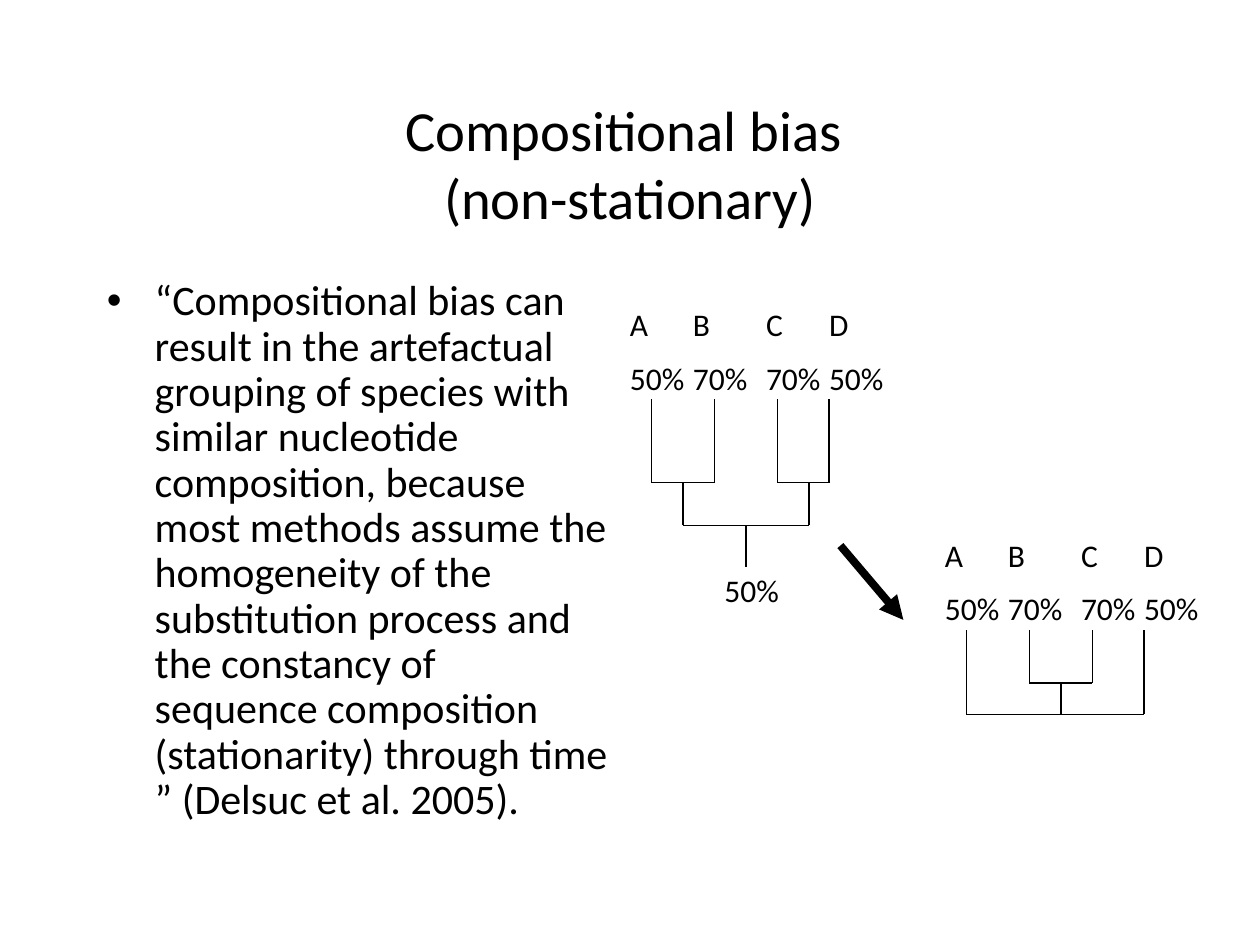
import pptx
import pptx.dml.color
import pptx.enum.shapes
import pptx.enum.text
import pptx.oxml
import pptx.oxml.ns
import pptx.util
from pptx.util import Inches, Pt

THEME = {
    "font": "Calibri",
    "ink": pptx.dml.color.RGBColor(0, 0, 0),
    "title": 32.4,
    "body": 24,
    "label": 18,
    "branch": 0.75,
    "arrow": 4.5,
}

TITLE_LINES = ["Compositional bias ", "(non-stationary)"]
QUOTE = (
    "“Compositional bias can result in the artefactual grouping of species "
    "with similar nucleotide composition, because most methods assume the "
    "homogeneity of the substitution process and the constancy of sequence "
    "composition (stationarity) through time ” (Delsuc et al. 2005)."
)

# Taxon: name, composition, label offset from the tree's left edge
TAXA = [("A", "50%", 0), ("B", "70%", 0.5), ("C", "70%", 1.08), ("D", "50%", 1.58)]

# Node: x offset, depth below the tips, children
A, B, C, D = [(x, 0, []) for x in (0.17, 0.67, 1.17, 1.58)]
TRUE_TREE = (0.92, 1.0, [(0.42, 0.66, [A, B]), (1.42, 0.66, [C, D])])
BIASED_TREE = (0.92, 0.67, [A, (0.92, 0.42, [B, C]), D])
TREES = [(5.0, 2.42, TRUE_TREE), (7.5, 4.25, BIASED_TREE)]
LABEL_HEIGHT = 0.75

ROOT_STEM = ((5.92, 4.17), (5.92, 4.5))
ROOT_LABEL = ("50%", 5.75, 4.53)
ARROW = ((6.67, 4.33), (7.17, 4.92))


def add_box(slide, left, top, width, height, inset=None):
    box = slide.shapes.add_textbox(*map(Inches, (left, top, width, height)))
    frame = box.text_frame
    frame.word_wrap = True
    if inset is not None:
        frame.margin_left = frame.margin_right = Inches(inset)
        frame.margin_top = frame.margin_bottom = Inches(inset)
    return frame


def add_span(para, text, size):
    span = para.add_run()
    span.text = text
    span.font.name = THEME["font"]
    span.font.size = Pt(size)
    span.font.color.rgb = THEME["ink"]


def add_title(slide):
    frame = add_box(slide, 0.75, 0.67, 8.5, 1.25)
    frame.vertical_anchor = pptx.enum.text.MSO_ANCHOR.MIDDLE
    para = frame.paragraphs[0]
    para.alignment = pptx.enum.text.PP_ALIGN.CENTER
    for index, line in enumerate(TITLE_LINES):
        if index:
            para.add_line_break()
        add_span(para, line, THEME["title"])


def add_quote(slide):
    para = add_box(slide, 0.75, 2.17, 4.17, 4.5).paragraphs[0]
    para.line_spacing = 0.9
    para.space_before = Pt(0.2 * THEME["body"])
    add_span(para, QUOTE, THEME["body"])
    properties = para._p.get_or_add_pPr()
    properties.set("marL", str(Inches(0.38)))
    properties.set("indent", str(Inches(-0.38)))
    for tag, name, value in (("a:buFont", "typeface", "Arial"), ("a:buChar", "char", "•")):
        bullet = pptx.oxml.ns.qn(tag)
        properties.append(properties.makeelement(bullet, {name: value}))


def add_label(slide, lines, left, top, height):
    frame = add_box(slide, left, top, 0.5, height, inset=0)
    frame.auto_size = pptx.enum.text.MSO_AUTO_SIZE.SHAPE_TO_FIT_TEXT
    for index, line in enumerate(lines):
        para = frame.add_paragraph() if index else frame.paragraphs[0]
        para.space_before = Pt(0.5 * THEME["label"])
        add_span(para, line, THEME["label"])


def add_line(slide, start, end, weight, arrowhead=False):
    line = slide.shapes.add_connector(
        pptx.enum.shapes.MSO_CONNECTOR.STRAIGHT, *map(Inches, (*start, *end))
    )
    line.line.color.rgb = THEME["ink"]
    line.line.width = Pt(weight)
    qn = pptx.oxml.ns.qn
    properties = line._element.spPr
    if arrowhead:
        outline = line.line._get_or_add_ln()
        outline.append(outline.makeelement(qn("a:tailEnd"), {"type": "triangle"}))
    properties.append(properties.makeelement(qn("a:effectLst"), {}))


def add_branches(slide, node, left, tips):
    """Join a node's children with a bar, then do the same for each child."""
    _, depth, children = node
    if not children:
        return
    bar = tips + depth
    first, last = left + children[0][0], left + children[-1][0]
    add_line(slide, (first, bar), (last, bar), THEME["branch"])
    for child in children:
        x = left + child[0]
        add_line(slide, (x, tips + child[1]), (x, bar), THEME["branch"])
        add_branches(slide, child, left, tips)


def main():
    deck = pptx.Presentation()
    deck.slide_width, deck.slide_height = Inches(10), Inches(7.5)
    slide = deck.slides.add_slide(deck.slide_layouts[6])

    add_title(slide)
    add_quote(slide)
    for left, top, root in TREES:
        add_branches(slide, root, left, top + LABEL_HEIGHT)
        for name, share, offset in TAXA:
            add_label(slide, [name, share], left + offset, top, LABEL_HEIGHT)

    add_line(slide, *ROOT_STEM, THEME["branch"])
    text, left, top = ROOT_LABEL
    add_label(slide, [text], left, top, 0.3)
    add_line(slide, *ARROW, THEME["arrow"], arrowhead=True)

    deck.save("out.pptx")


if __name__ == "__main__":
    main()
